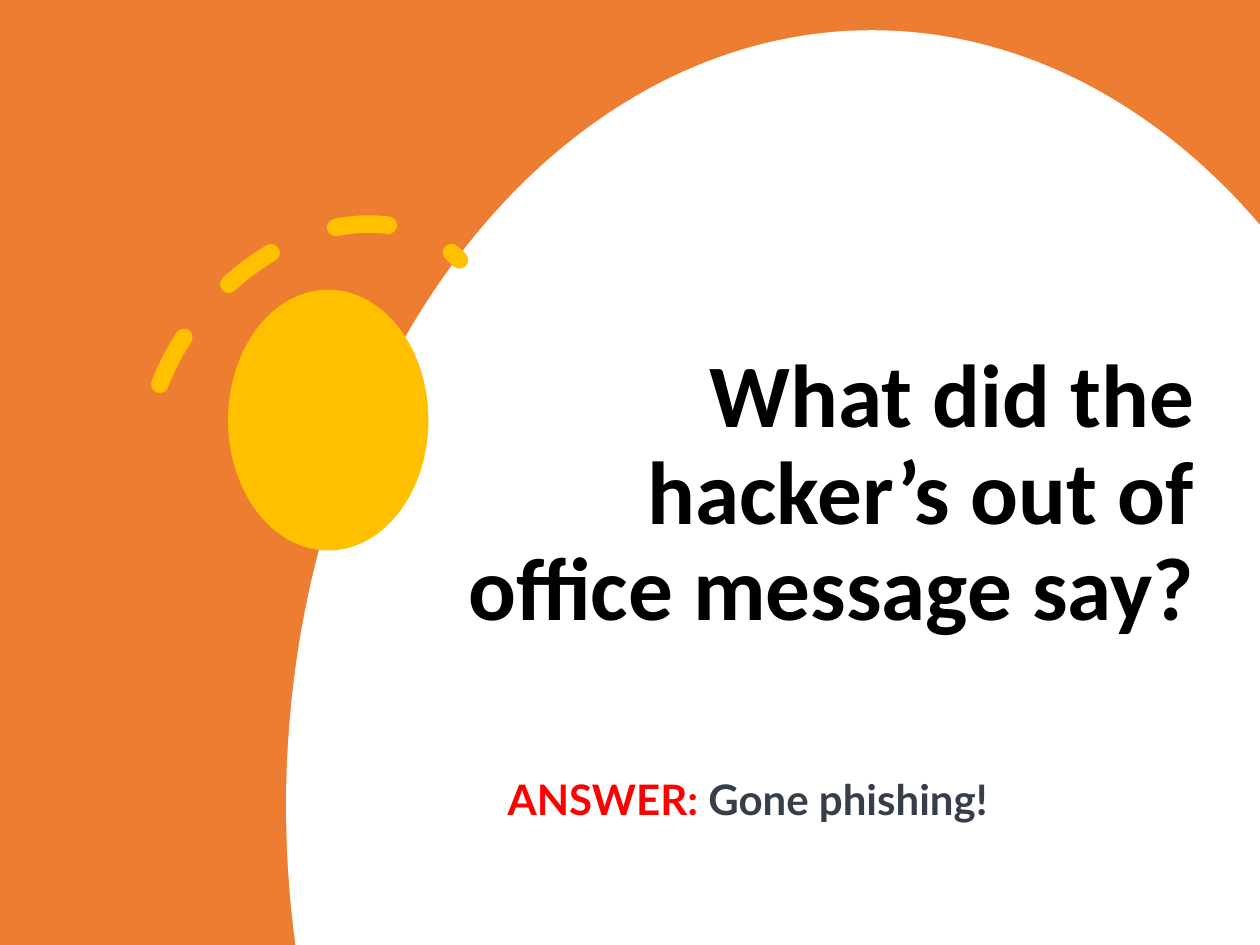
import math
from collections import namedtuple
from dataclasses import dataclass

from lxml import etree
from pptx import Presentation
from pptx.dml.color import RGBColor
from pptx.enum import dml, shapes, text
from pptx.util import Pt

Box = namedtuple("Box", "left top width height")


@dataclass(frozen=True)
class Theme:
    back: str = "ED7D31"
    disc: str = "FFFFFF"
    sun: str = "FFC000"
    ink: str = "000000"
    label: str = "FF0000"
    reply: str = "363E49"
    head: str = "Calibri"
    body: str = "Lato"
    big: float = 51
    small: float = 24
    dash: float = 10


THEME = Theme()
PAGE = Box(0, 0, 720, 540)


def points(box):
    return [Pt(v) for v in box]


def apply(item, values):
    for name, value in values.items():
        setattr(item, name, value)


def paint(shape, color):
    shape.shadow.inherit = False
    shape.fill.solid()
    shape.fill.fore_color.rgb = RGBColor.from_string(color)
    shape.line.fill.background()


def add_run(para, words, face, size, color):
    run = para.add_run()
    run.text = words
    apply(run.font, {"name": face, "size": Pt(size), "bold": True})
    run.font.color.rgb = RGBColor.from_string(color)


def add_solid(slide, kind, box, color):
    paint(slide.shapes.add_shape(kind, *points(box)), color)


def add_disc(slide, box, page, color):
    """Draw the ellipse that fills box, cut off at the page's right and bottom."""
    rx, ry = box.width / 2, box.height / 2
    cx, cy = box.left + rx, box.top + ry
    right, base = page.left + page.width, page.top + page.height
    start = math.pi - math.asin((base - cy) / ry)
    end = 2 * math.pi - math.acos((right - cx) / rx)
    steps = 120
    angles = [start + (end - start) * i / steps for i in range(steps + 1)]
    rim = [(Pt(cx + rx * math.cos(a)), Pt(cy + ry * math.sin(a))) for a in angles]
    pen = slide.shapes.build_freeform(*rim[0])
    pen.add_line_segments(rim[1:] + [(Pt(right), Pt(base))], close=True)
    paint(pen.convert_to_shape(), color)


def add_rays(slide, box, theme):
    """Draw the dashed arc with round ends above the sun."""
    arc = slide.shapes.add_shape(shapes.MSO_SHAPE.ARC, *points(box))
    arc.rotation = 308.7
    arc.adjustments[0], arc.adjustments[1] = 144.56, 2.28
    arc.shadow.inherit = False
    arc.fill.background()
    arc.line.color.rgb = RGBColor.from_string(theme.sun)
    apply(arc.line, {"width": Pt(theme.dash),
                     "dash_style": dml.MSO_LINE.DASH})
    line = arc.line.fill._xPr
    line.set("cap", "rnd")
    etree.SubElement(line, line.tag.replace("}ln", "}round"))


def add_sun(slide, box, theme):
    add_solid(slide, shapes.MSO_SHAPE.OVAL, box, theme.sun)
    rays = Box(box.left - 64.8, box.top - 18.7, 235.4, 176.4)
    add_rays(slide, rays, theme)


def set_title(slide, box, words, theme):
    title = slide.shapes.title
    apply(title, dict(zip(Box._fields, points(box))))
    apply(title.text_frame, {"word_wrap": True,
                             "auto_size": text.MSO_AUTO_SIZE.NONE,
                             "vertical_anchor": text.MSO_ANCHOR.BOTTOM})
    para = title.text_frame.paragraphs[0]
    apply(para, {"alignment": text.PP_ALIGN.RIGHT, "line_spacing": 0.9,
                 "space_before": Pt(0), "space_after": Pt(6)})
    add_run(para, words, theme.head, theme.big, theme.ink)
    # The title belongs in front of the painted shapes.
    title.element.getparent().append(title.element)


def add_answer(slide, box, label, reply, theme):
    frame = slide.shapes.add_textbox(*points(box)).text_frame
    apply(frame, {"word_wrap": True,
                  "auto_size": text.MSO_AUTO_SIZE.SHAPE_TO_FIT_TEXT})
    para = frame.paragraphs[0]
    for words, color in ((label, theme.label), (reply, theme.reply)):
        add_run(para, words, theme.body, theme.small, color)


def add_riddle(deck, page, theme):
    slide = deck.slides.add_slide(deck.slide_layouts[5])
    add_solid(slide, shapes.MSO_SHAPE.RECTANGLE, page, theme.back)
    add_disc(slide, Box(163.5, 17.3, 669.5, 887), page, theme.disc)
    add_sun(slide, Box(130.3, 165.6, 114.5, 149), theme)
    set_title(slide, Box(238.3, 152.6, 451.4, 216.7),
              "What did the hacker’s out of office message say?", theme)
    add_answer(slide, Box(283, 438.5, 362.2, 36),
               "ANSWER: ", "Gone phishing!", theme)


def main():
    deck = Presentation()
    apply(deck, {"slide_width": Pt(PAGE.width), "slide_height": Pt(PAGE.height)})
    add_riddle(deck, PAGE, THEME)
    deck.save("out.pptx")


if __name__ == "__main__":
    main()
